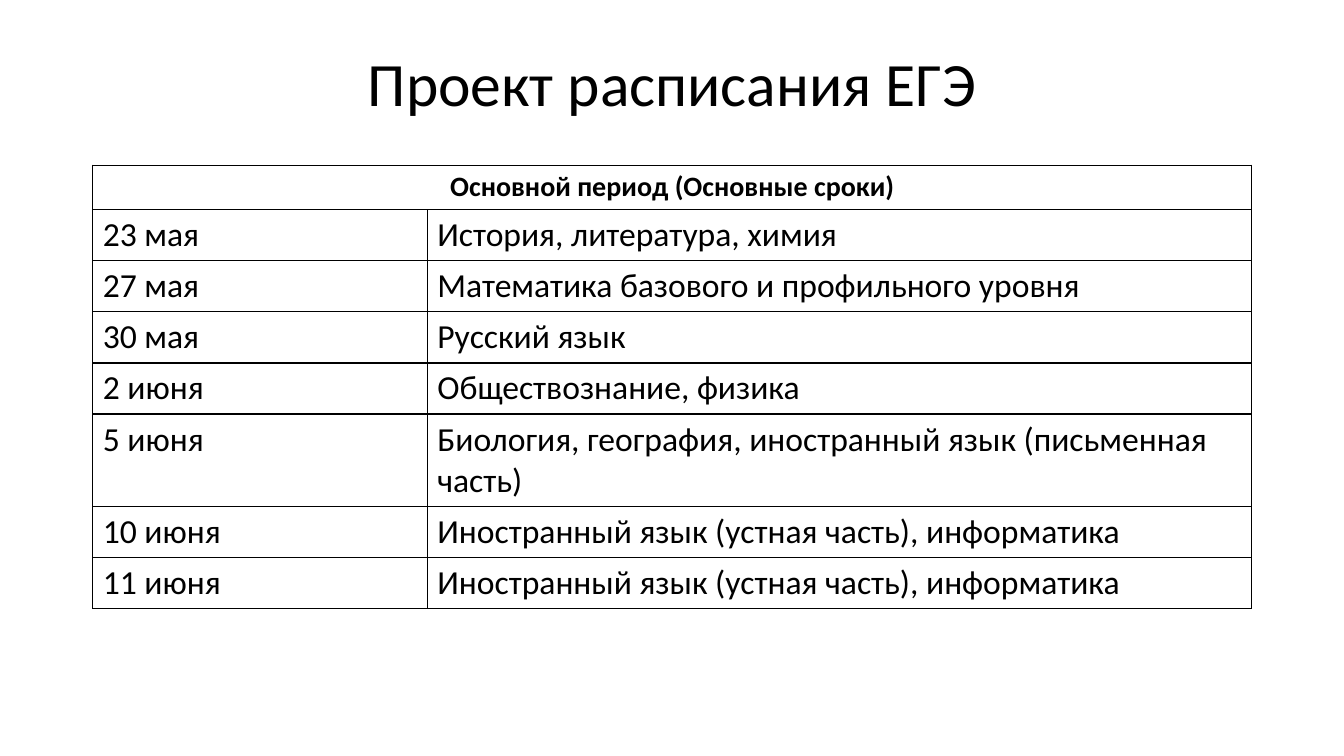
from dataclasses import dataclass

from lxml import etree
from pptx import Presentation
from pptx.dml.color import RGBColor
from pptx.enum import text
from pptx.oxml import ns
from pptx.util import Pt

BLACK = RGBColor(0, 0, 0)
WHITE = RGBColor(255, 255, 255)
FONT = "Calibri"
LEFT, WIDTH = Pt(66.24), Pt(828)
COLS = (Pt(239), Pt(589))
ROW = Pt(29.5)


@dataclass(frozen=True)
class Exam:
    date: str
    topics: str


ORAL = "Иностранный язык (устная часть), информатика"
EXAMS = (
    Exam("23 мая", "История, литература, химия"),
    Exam("27 мая", "Математика базового и профильного уровня"),
    Exam("30 мая", "Русский язык"),
    Exam("2 июня", "Обществознание, физика"),
    Exam("5 июня", "Биология, география, иностранный язык (письменная часть)"),
    Exam("10 июня", ORAL),
    Exam("11 июня", ORAL),
)


def write(frame, words: str, size: float, bold: bool = False,
          align=text.PP_ALIGN.LEFT) -> None:
    para = frame.paragraphs[0]
    para.alignment = align
    run = para.add_run()
    run.text = words
    font = run.font
    font.name, font.size, font.bold = FONT, Pt(size), bold
    font.color.rgb = BLACK


def style(cell) -> None:
    """Give a cell thin black borders and a white fill."""
    props = cell._tc.get_or_add_tcPr()
    for side in ("lnL", "lnR", "lnT", "lnB"):
        line = etree.SubElement(props, ns.qn(f"a:{side}"), w=str(Pt(1)))
        fill = etree.SubElement(line, ns.qn("a:solidFill"))
        etree.SubElement(fill, ns.qn("a:srgbClr"), val=str(BLACK))
    cell.fill.solid()
    cell.fill.fore_color.rgb = WHITE


def add_title(slide) -> None:
    title = slide.shapes.title
    title.left, title.top, title.width, title.height = LEFT, Pt(28.8), WIDTH, Pt(65.5)
    frame = title.text_frame
    frame.vertical_anchor = text.MSO_ANCHOR.MIDDLE
    write(frame, "Проект расписания ЕГЭ", 44, align=text.PP_ALIGN.CENTER)
    frame.paragraphs[0].line_spacing = 0.9


def add_plan(slide) -> None:
    count = len(EXAMS) + 1
    grid = slide.shapes.add_table(
        count, len(COLS), LEFT, Pt(118), WIDTH, ROW * count).table
    grid.horz_banding = False
    for col, width in zip(grid.columns, COLS):
        col.width = width
    for row in grid.rows:
        row.height = ROW
        for cell in row.cells:
            style(cell)
    head = grid.cell(0, 0)
    head.merge(grid.cell(0, 1))
    write(head.text_frame, "Основной период (Основные сроки)", 20, True,
          text.PP_ALIGN.CENTER)
    for row, exam in enumerate(EXAMS, 1):
        for col, words in enumerate((exam.date, exam.topics)):
            write(grid.cell(row, col).text_frame, words, 24)


def main() -> None:
    deck = Presentation()
    deck.slide_width, deck.slide_height = Pt(960), Pt(540)
    slide = deck.slides.add_slide(deck.slide_layouts.get_by_name("Title Only"))
    add_title(slide)
    add_plan(slide)
    deck.save("out.pptx")


if __name__ == "__main__":
    main()
